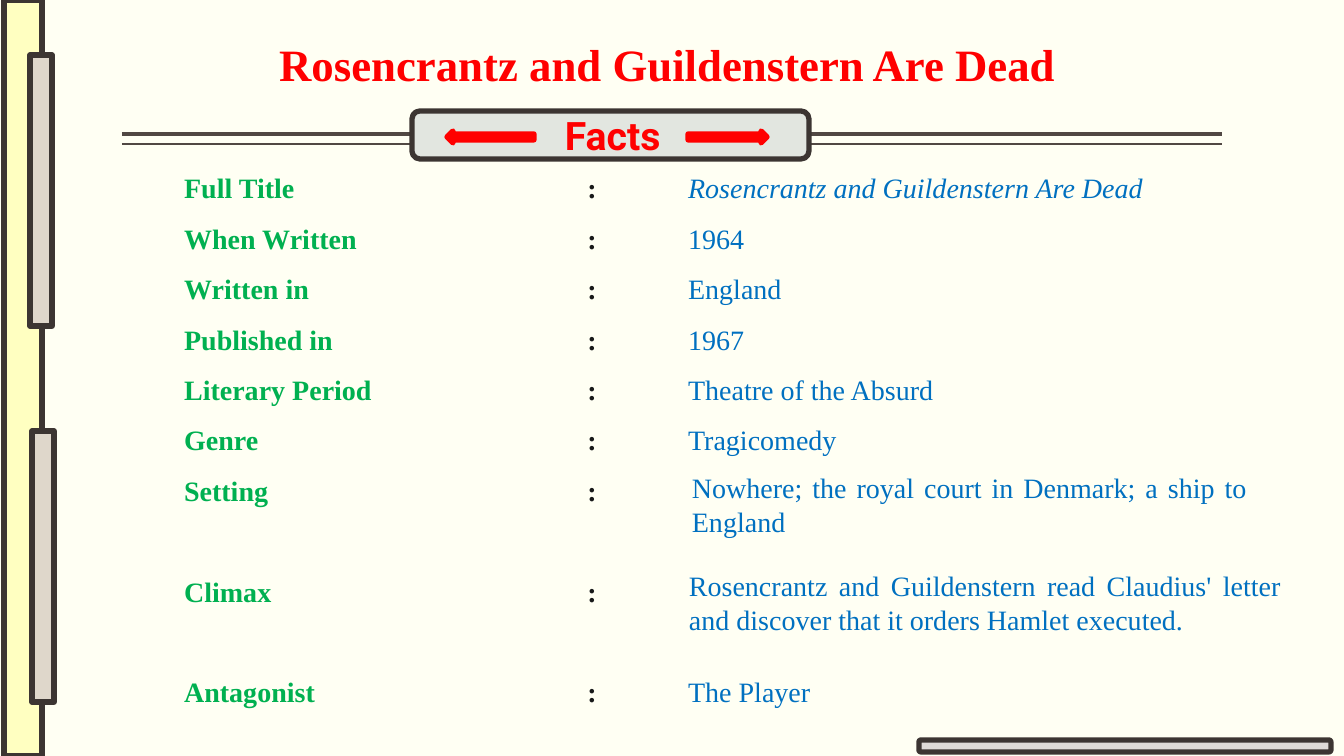
import pptx
import pptx.util
import pptx.dml.color
import pptx.enum.shapes
import pptx.enum.text
import pptx.oxml
import pptx.oxml.ns

SHAPE = pptx.enum.shapes.MSO_SHAPE
ALIGN = pptx.enum.text.PP_ALIGN
SERIF = "Times New Roman"
OUTLINE, RED, GREEN, BLUE, INK = "3C3532", "FF0000", "00B050", "0070C0", "181919"
FACTS = [
    ("Full Title", 3, "Rosencrantz and Guildenstern Are Dead"),
    ("When Written", 3, "1964"),
    ("Written in", 3, "England"),
    ("Published in", 3, "1967"),
    ("Literary Period", 3, "Theatre of the Absurd"),
    ("Genre", 4, "Tragicomedy"),
    ("Setting", 4, ""),
    ("Climax", 4, ""),
    ("Antagonist", 3, "The Player"),
]
ROW_PT = 36


def px(n):
    return pptx.util.Emu(round(n * 914400 / 100.8))


def rgb(value):
    return pptx.dml.color.RGBColor.from_string(value)


def place(sp, x, y, w, h):
    sp.left, sp.top, sp.width, sp.height = px(x), px(y), px(w), px(h)


def style(r, size, color, bold=False, italic=False, font=SERIF):
    r.font.name = font
    r.font.size = pptx.util.Pt(size)
    r.font.bold = bold
    r.font.italic = italic
    r.font.color.rgb = rgb(color)


def add_block(s, kind, x, y, w, h, fill, line=OUTLINE):
    sp = s.shapes.add_shape(kind, px(x), px(y), px(w), px(h))
    sp.shadow.inherit = False
    sp.fill.solid()
    sp.fill.fore_color.rgb = rgb(fill)
    sp.line.color.rgb = rgb(line)
    sp.line.width = pptx.util.Pt(3.78)


def add_rule(s, y, weight):
    line = s.shapes.add_connector(
        pptx.enum.shapes.MSO_CONNECTOR.STRAIGHT, px(122), px(y), px(1222), px(y))
    line.line.color.rgb = rgb("514843")
    line.line.width = pptx.util.Pt(weight)
    line._element.spPr.append(pptx.oxml.parse_xml(
        f"<a:effectLst {pptx.oxml.ns.nsdecls('a')}/>"))


def add_text(s, x, y, w, h, text, size, color, align, bold=False, font=SERIF, wrap=True):
    tf = s.shapes.add_textbox(px(x), px(y), px(w), px(h)).text_frame
    tf.word_wrap = wrap
    tf.text = text
    p = tf.paragraphs[0]
    p.alignment = align
    style(p.runs[0], size, color, bold, font=font)


def fill_title(sp, text):
    place(sp, 253, 31, 829, 65)
    tf = sp.text_frame
    tf.auto_size = pptx.enum.text.MSO_AUTO_SIZE.NONE
    tf.text = text
    tf.paragraphs[0].alignment = ALIGN.CENTER
    style(tf.paragraphs[0].runs[0], 32, RED, bold=True)


def set_columns(p):
    pPr = p._p.get_or_add_pPr()
    pPr.set("marL", "0")
    pPr.set("indent", "0")
    pPr.set("defTabSz", str(int(pptx.util.Inches(1))))
    pPr.append(pptx.oxml.parse_xml(f"<a:buNone {pptx.oxml.ns.nsdecls('a')}/>"))


def fill_facts(sp):
    place(sp, 174, 149, 1040, 564)
    tf = sp.text_frame
    tf.auto_size = pptx.enum.text.MSO_AUTO_SIZE.NONE
    for i, (label, tabs, value) in enumerate(FACTS):
        p = tf.paragraphs[0] if i == 0 else tf.add_paragraph()
        p.alignment = ALIGN.LEFT
        p.line_spacing = pptx.util.Pt(ROW_PT)
        p.space_before = pptx.util.Pt(0)
        p.space_after = pptx.util.Pt(0 if value else ROW_PT)
        set_columns(p)
        p.text = label
        style(p.runs[0], 20, GREEN, bold=True)
        r = p.add_run()
        r.text = "\t" * tabs + (":\t" if value else ":")
        style(r, 20, INK, bold=True)
        if value:
            r = p.add_run()
            r.text = value
            style(r, 20, BLUE, italic=label == "Full Title")


def main():
    prs = pptx.Presentation()
    prs.slide_width, prs.slide_height = px(1344), px(756)
    s = prs.slides.add_slide(prs.slide_layouts[1])
    s.background.fill.solid()
    s.background.fill.fore_color.rgb = rgb("FFFFF3")

    add_rule(s, 134, 3)
    add_rule(s, 144, 1)
    add_block(s, SHAPE.RECTANGLE, 4, 0, 38, 756, "FFFFC1")
    add_block(s, SHAPE.RECTANGLE, 30, 55, 22, 271, "DFD7CB")
    add_block(s, SHAPE.RECTANGLE, 32, 431, 22, 271, "DFD7CB")
    add_block(s, SHAPE.ROUNDED_RECTANGLE, 919, 740, 412, 12, "DEDAD7")

    fill_title(s.shapes.title, "Rosencrantz and Guildenstern Are Dead")
    fill_facts(s.placeholders[1])
    add_text(s, 682, 466, 575, 78, "Nowhere; the royal court in Denmark; a ship to England",
             20, BLUE, ALIGN.JUSTIFY)
    add_text(s, 679, 564, 612, 78,
             "Rosencrantz and Guildenstern read Claudius' letter and discover "
             "that it orders Hamlet executed.", 20, BLUE, ALIGN.JUSTIFY)

    add_block(s, SHAPE.ROUNDED_RECTANGLE, 412, 111, 397, 48, "E2E6E0")
    add_text(s, 555, 106, 117, 57, "Facts", 28, RED, ALIGN.LEFT, True, "Roboto", False)
    add_block(s, SHAPE.RIGHT_ARROW, 688, 131, 79, 12, RED, RED)
    add_block(s, SHAPE.LEFT_ARROW, 447, 131, 87, 12, RED, RED)
    prs.save("out.pptx")


if __name__ == "__main__":
    main()
